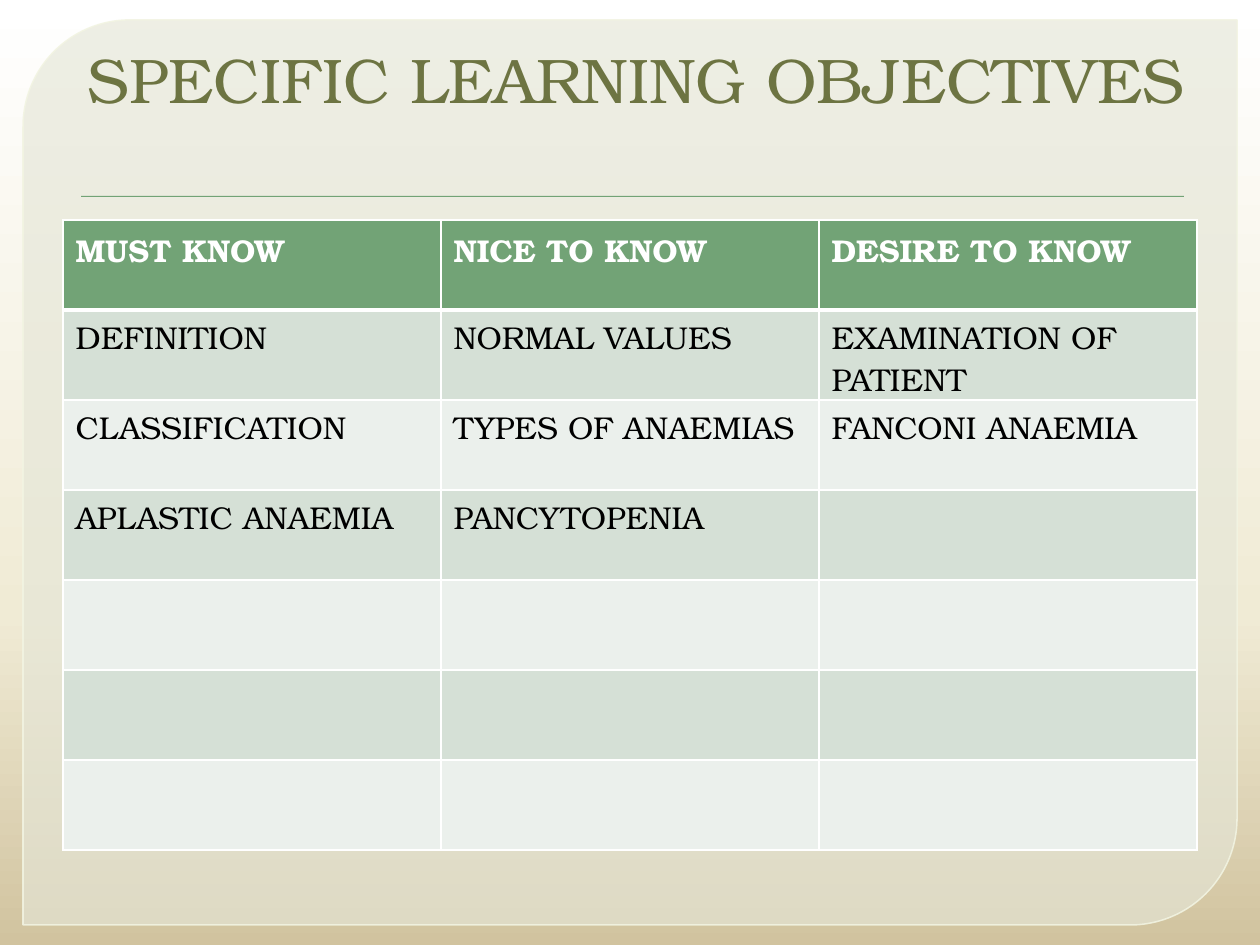
import copy
import pptx
import pptx.dml.color
import pptx.enum.shapes
import pptx.enum.text
import pptx.oxml
import pptx.oxml.ns
import pptx.util

TITLE = "SPECIFIC LEARNING OBJECTIVES"
ROWS = [
    ("MUST KNOW", "NICE TO KNOW", "DESIRE TO KNOW"),
    ("DEFINITION", "NORMAL VALUES", "EXAMINATION OF PATIENT"),
    ("CLASSIFICATION", "TYPES OF ANAEMIAS", "FANCONI ANAEMIA"),
    ("APLASTIC ANAEMIA", "PANCYTOPENIA", ""),
    ("", "", ""),
    ("", "", ""),
    ("", "", ""),
]
THEME = {
    "font": "TeX Gyre Bonum",
    "back": [(0, "FFFFFF"), (65, "F0EBD5"), (100, "D1C39F")],
    "panel": "E5E6D7", "edge": "F2F4E2", "green": "72A376",
    "title": "6D7442", "white": "FFFFFF", "black": "000000",
    "bands": ("D5E0D6", "EBF0EC"),
    "head": 36, "body": 18,
}
PANEL = (23, 20, 1214, 905)
RULE = (81, 196, 1103, 1)
HEAD = (63, 38, 1134, 84)
GRID = (63, 220)
COL, ROW = 378, 90


def px(n):
    return pptx.util.Emu(round(n * 914400 / 126))


def box(spot):
    return [px(n) for n in spot]


def rgb(code):
    return pptx.dml.color.RGBColor.from_string(code)


def paint(fill, code, alpha=100):
    fill.solid()
    fill.fore_color.rgb = rgb(code)
    if alpha < 100:
        tone = fill._xPr.find(".//" + pptx.oxml.ns.qn("a:srgbClr"))
        tone.append(pptx.oxml.parse_xml(
            f'<a:alpha {pptx.oxml.ns.nsdecls("a")} val="{alpha * 1000}"/>'))


def write(frame, text, size, code, bold=False):
    run = frame.paragraphs[0].add_run()
    run.text = text
    look = {"name": THEME["font"], "size": pptx.util.Pt(size), "bold": bold}
    for key, val in look.items():
        setattr(run.font, key, val)
    run.font.color.rgb = rgb(code)


def shade(slide):
    fill = slide.background.fill
    fill.gradient()
    fill.gradient_angle = 270
    first = fill.gradient_stops[0]._gs
    first.addnext(copy.deepcopy(first))
    for stop, (place, code) in zip(fill.gradient_stops, THEME["back"]):
        stop.position = place / 100
        stop.color.rgb = rgb(code)


def block(slide, kind, spot, code, alpha=100):
    shape = slide.shapes.add_shape(kind, *box(spot))
    shape.shadow.inherit = False
    paint(shape.fill, code, alpha)
    return shape


def border(cell, top, base):
    props = cell._tc.get_or_add_tcPr()
    for side, width in zip("LRTB", (1, 1, top, base)):
        props.append(pptx.oxml.parse_xml(
            f'<a:ln{side} {pptx.oxml.ns.nsdecls("a")} w="{width * 12700}">'
            f'<a:solidFill><a:srgbClr val="{THEME["white"]}"/></a:solidFill>'
            f'</a:ln{side}>'))


def grid(slide):
    rows, cols = len(ROWS), len(ROWS[0])
    spot = (*GRID, cols * COL, rows * ROW)
    table = slide.shapes.add_table(rows, cols, *box(spot)).table
    table.first_row = table.horz_banding = False
    for col in table.columns:
        col.width = px(COL)
    for r, texts in enumerate(ROWS):
        table.rows[r].height = px(ROW)
        top = r == 0
        for c, text in enumerate(texts):
            cell = table.cell(r, c)
            border(cell, 3 if r == 1 else 1, 3 if top else 1)
            paint(cell.fill, THEME["green"] if top else THEME["bands"][(r - 1) % 2])
            if text:
                code = THEME["white" if top else "black"]
                write(cell.text_frame, text, THEME["body"], code, top)


def main():
    deck = pptx.Presentation()
    deck.slide_width, deck.slide_height = px(1260), px(945)
    slide = deck.slides.add_slide(deck.slide_layouts[6])
    shade(slide)

    kinds = pptx.enum.shapes.MSO_SHAPE
    panel = block(slide, kinds.ROUND_2_DIAG_RECTANGLE, PANEL, THEME["panel"], 65)
    panel.adjustments[0] = 0.118
    panel.adjustments[1] = 0
    paint(panel.line.fill, THEME["edge"], 88)
    panel.line.width = pptx.util.Pt(0.87)

    rule = block(slide, kinds.RECTANGLE, RULE, THEME["green"])
    rule.line.fill.background()

    frame = slide.shapes.add_textbox(*box(HEAD)).text_frame
    frame.word_wrap = True
    frame.vertical_anchor = pptx.enum.text.MSO_ANCHOR.BOTTOM
    frame.paragraphs[0].alignment = pptx.enum.text.PP_ALIGN.RIGHT
    write(frame, TITLE, THEME["head"], THEME["title"])

    grid(slide)
    deck.save("out.pptx")


if __name__ == "__main__":
    main()
